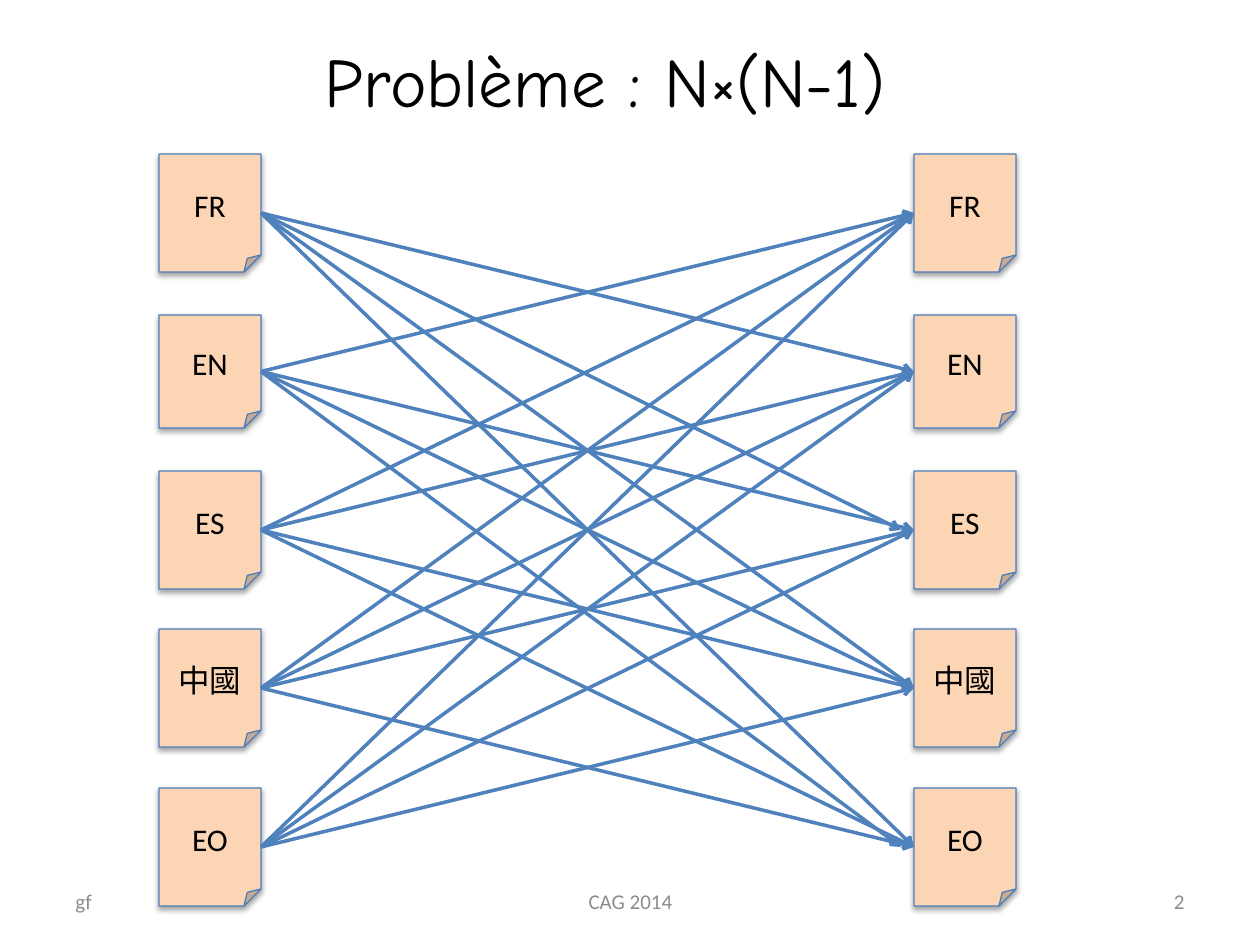
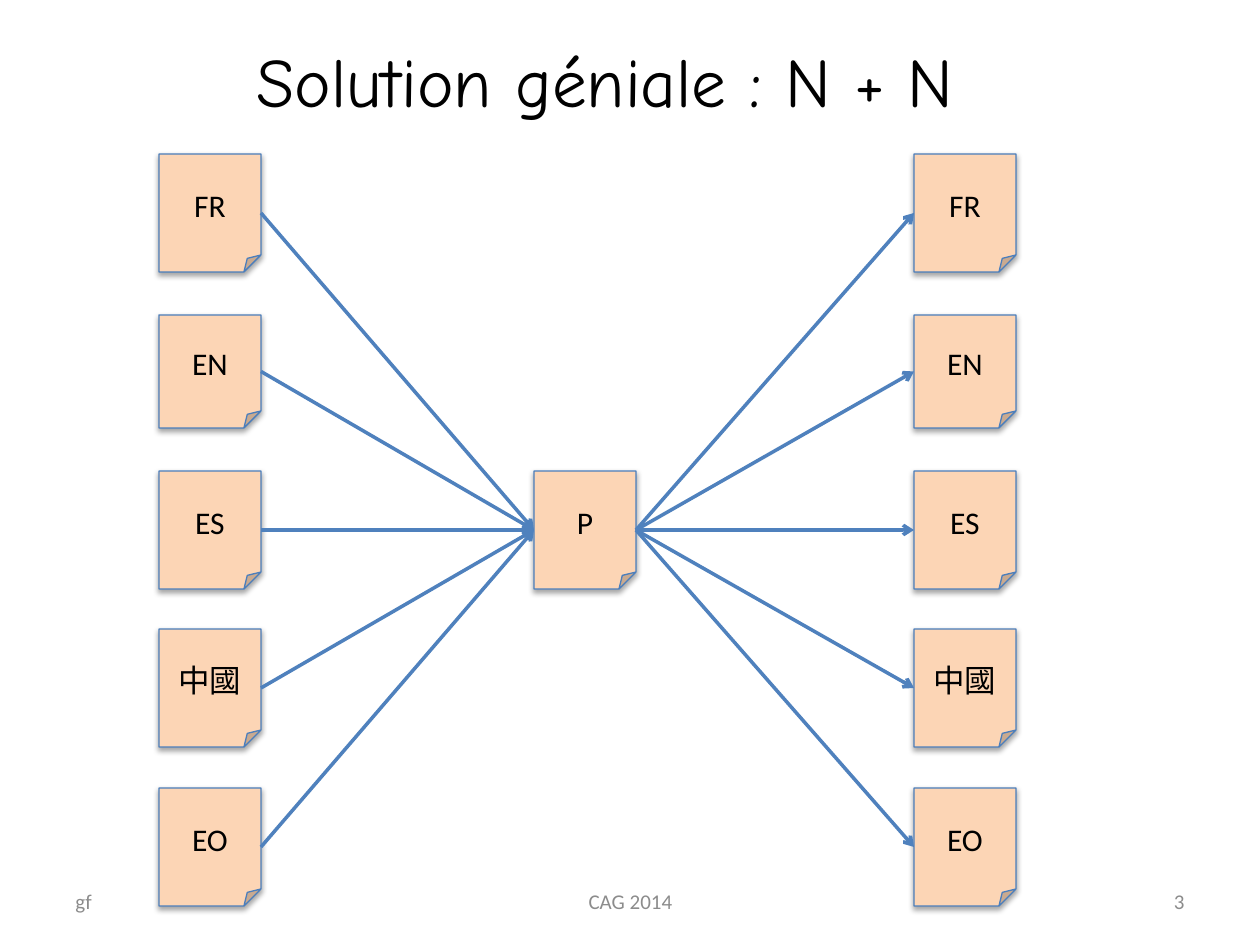
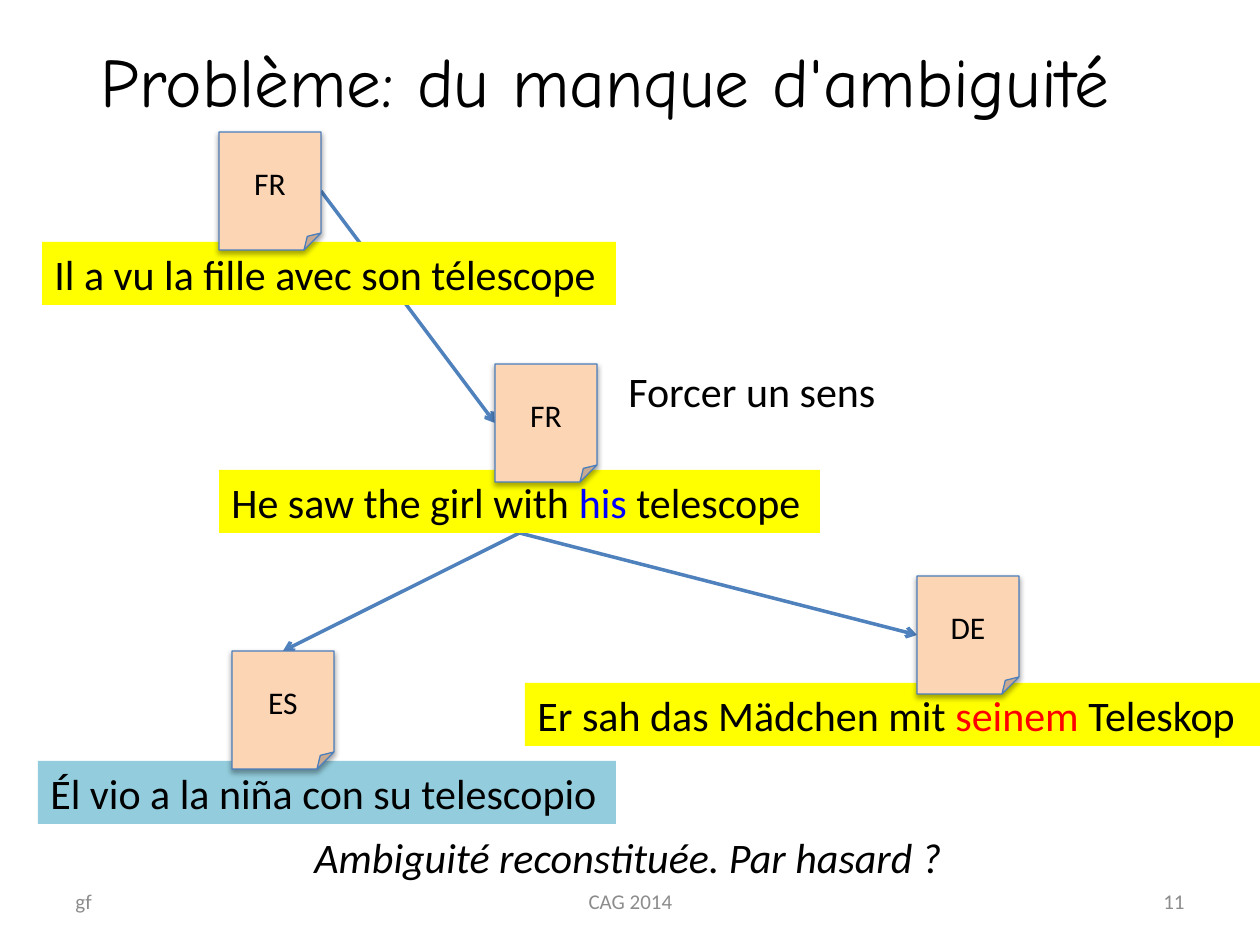
from dataclasses import dataclass
from itertools import product

from lxml.etree import SubElement
from pptx import Presentation
from pptx.dml.color import RGBColor
from pptx.enum.shapes import MSO_CONNECTOR as Connector, MSO_SHAPE as Shape
from pptx.enum.text import MSO_ANCHOR as Anchor, MSO_AUTO_SIZE as AutoSize, PP_ALIGN as Align
from pptx.oxml.ns import qn
from pptx.util import Emu, Pt


@dataclass(frozen=True)
class Theme:
    ink: str = "000000"
    muted: str = "8C8C8C"
    paper: str = "FCD5B5"
    paper_edge: str = "4B7EBC"
    arrow: str = "4F81BD"
    yellow: str = "FFFF00"
    aqua: str = "93CDDD"
    blue: str = "0000FF"
    red: str = "FF0000"
    title_font: str = "Comic Neue"
    body_font: str = "Calibri"
    title_size: float = 39.6
    sentence_size: int = 24
    note_size: int = 18
    footer_size: int = 12
    edge_width: float = 0.75
    arrow_width: int = 2


THEME = Theme()
PX_PER_INCH = 126
SLIDE_SIZE = (1260, 945)
TOP, LEFT, BOTTOM, RIGHT = range(4)

LANGUAGES = ["FR", "EN", "ES", "中國", "EO"]
PIVOT = "P"
PAIRS_TITLE = "Problème : N×(N-1)"
PIVOT_TITLE = "Solution géniale : N + N"
AMBIGUITY_TITLE = "Problème: du manque d'ambiguité"
PAGES = {PAIRS_TITLE: "2", PIVOT_TITLE: "3", AMBIGUITY_TITLE: "11"}
AUTHOR, EVENT = "gf", "CAG 2014"

SENTENCES = {
    "english": ([("He saw the girl with ", THEME.ink), ("his", THEME.blue),
                 (" telescope", THEME.ink)], (219, 470, 601), THEME.yellow),
    "french": ("Il a vu la fille avec son télescope", (42, 242, 574), THEME.yellow),
    "german": ([("Er sah das Mädchen mit ", THEME.ink), ("seinem", THEME.red),
                (" Teleskop", THEME.ink)], (525, 683, 735), THEME.yellow),
    "remark": ("Forcer un sens", (616, 359, 276), None),
    "spanish": ("Él vio a la niña con su telescopio", (38, 761, 578), THEME.aqua),
    "question": ("Ambiguité reconstituée. Par hasard ?", (302, 825, 672), None),
}
SENTENCE_HEIGHT = 63
SENTENCE_NOTES = {
    "spanish": ("ES", 232, 651),
    "english": ("FR", 495, 364),
    "french": ("FR", 219, 132),
    "german": ("DE", 917, 576),
}

NOTE_WIDTH, NOTE_HEIGHT = 102, 118
HEIGHT_OF = {"EN": 113}
SOURCE_X, PIVOT_X, TARGET_X = 159, 534, 914
FIRST_CENTRE, TWO_ROWS = 213, 317
SHORT_PAIRS = {("FR", "ES"), ("EN", "EO")}
SHORT_GAP = 13

TITLE_BOX = (63, 38, 1084, 83)
FOOTER_Y, FOOTER_HEIGHT = 876, 50
FOOTER_SLOTS = [(63, 294, Align.LEFT), (431, 399, Align.CENTER), (903, 294, Align.RIGHT)]


def px(*lengths):
    return [Emu(round(length * 914400 / PX_PER_INCH)) for length in lengths]


def rgb(code):
    return RGBColor.from_string(code)


def write(box, text, size, font=THEME.body_font, color=THEME.ink, align=Align.LEFT,
          anchor=Anchor.MIDDLE, italic=None, wrap=True, fit=AutoSize.NONE):
    frame = box.text_frame
    frame.word_wrap, frame.auto_size, frame.vertical_anchor = wrap, fit, anchor
    paragraph = frame.paragraphs[0]
    paragraph.alignment = align
    for part, part_color in [(text, color)] if isinstance(text, str) else text:
        run = paragraph.add_run()
        run.text = part
        run.font.name, run.font.size, run.font.italic = font, Pt(size), italic
        run.font.color.rgb = rgb(part_color)


def add_slide(deck, title):
    slide = deck.slides.add_slide(deck.slide_layouts[5])
    heading = slide.shapes.title
    heading.left, heading.top, heading.width, heading.height = px(*TITLE_BOX)
    write(heading, title, THEME.title_size, font=THEME.title_font, align=Align.CENTER)
    for text, (x, width, align) in zip([AUTHOR, EVENT, PAGES[title]], FOOTER_SLOTS):
        footer = slide.shapes.add_textbox(*px(x, FOOTER_Y, width, FOOTER_HEIGHT))
        write(footer, text, THEME.footer_size, color=THEME.muted, align=align)
    return slide


def add_note(slide, label, x, y, height=NOTE_HEIGHT):
    note = slide.shapes.add_shape(Shape.FOLDED_CORNER, *px(x, y, NOTE_WIDTH, height))
    note.fill.solid()
    note.fill.fore_color.rgb = rgb(THEME.paper)
    note.line.color.rgb = rgb(THEME.paper_edge)
    note.line.width = Pt(THEME.edge_width)
    note.shadow.inherit = False
    effects = note._element.spPr.find(qn("a:effectLst"))
    shadow = SubElement(effects, qn("a:outerShdw"), blurRad="40000", dist="23000",
                        dir="5400000", rotWithShape="0")
    shade = SubElement(shadow, qn("a:srgbClr"), val=THEME.ink)
    SubElement(shade, qn("a:alpha"), val="35000")
    write(note, label, THEME.note_size, align=Align.CENTER)
    return note


def add_column(slide, x):
    column = {}
    for row, label in enumerate(LANGUAGES):
        height = HEIGHT_OF.get(label, NOTE_HEIGHT)
        centre = FIRST_CENTRE + row * TWO_ROWS // 2
        column[label] = add_note(slide, label, x, centre - height // 2, height)
    return column


def link(slide, start, end, start_side=RIGHT, end_side=LEFT, gap=0, behind=False):
    arrow = slide.shapes.add_connector(Connector.STRAIGHT, 0, 0, 0, 0)
    arrow.begin_connect(start, start_side)
    if gap:
        arrow.end_x = end.left - px(gap)[0]
        arrow.end_y = end.top + end.height // 2
    else:
        arrow.end_connect(end, end_side)
    arrow.line.color.rgb = rgb(THEME.arrow)
    arrow.line.width = Pt(THEME.arrow_width)
    properties = arrow._element.spPr
    SubElement(properties.find(qn("a:ln")), qn("a:tailEnd"), type="arrow")
    SubElement(properties, qn("a:effectLst"))
    if behind:
        slide.shapes.title._element.addnext(arrow._element)


def add_sentence(slide, text, place, fill, italic=None):
    sentence = slide.shapes.add_textbox(*px(*place, SENTENCE_HEIGHT))
    if fill:
        sentence.fill.solid()
        sentence.fill.fore_color.rgb = rgb(fill)
    write(sentence, text, THEME.sentence_size, anchor=Anchor.TOP, italic=italic,
          wrap=False, fit=AutoSize.SHAPE_TO_FIT_TEXT)
    return sentence


def build_pairs(deck):
    slide = add_slide(deck, PAIRS_TITLE)
    sources, targets = add_column(slide, SOURCE_X), add_column(slide, TARGET_X)
    for pair in product(LANGUAGES, repeat=2):
        source, target = pair
        if source != target:
            link(slide, sources[source], targets[target],
                 gap=SHORT_GAP if pair in SHORT_PAIRS else 0)


def build_pivot(deck):
    slide = add_slide(deck, PIVOT_TITLE)
    sources, targets = add_column(slide, SOURCE_X), add_column(slide, TARGET_X)
    middle_row = LANGUAGES.index("ES")
    pivot_y = FIRST_CENTRE + middle_row * TWO_ROWS // 2 - NOTE_HEIGHT // 2
    pivot = add_note(slide, PIVOT, PIVOT_X, pivot_y)
    for language in LANGUAGES:
        link(slide, sources[language], pivot)
        link(slide, pivot, targets[language])


def build_ambiguity(deck):
    slide = add_slide(deck, AMBIGUITY_TITLE)
    sentences = {role: add_sentence(slide, *content, italic=role == "question" or None)
                 for role, content in SENTENCES.items()}
    notes = {role: add_note(slide, *content) for role, content in SENTENCE_NOTES.items()}
    link(slide, notes["french"], notes["english"], behind=True)
    link(slide, sentences["english"], notes["german"], BOTTOM, LEFT, behind=True)
    link(slide, sentences["english"], notes["spanish"], BOTTOM, TOP, behind=True)


def main():
    deck = Presentation()
    deck.slide_width, deck.slide_height = px(*SLIDE_SIZE)
    build_pairs(deck)
    build_pivot(deck)
    build_ambiguity(deck)
    deck.save("out.pptx")


if __name__ == "__main__":
    main()
